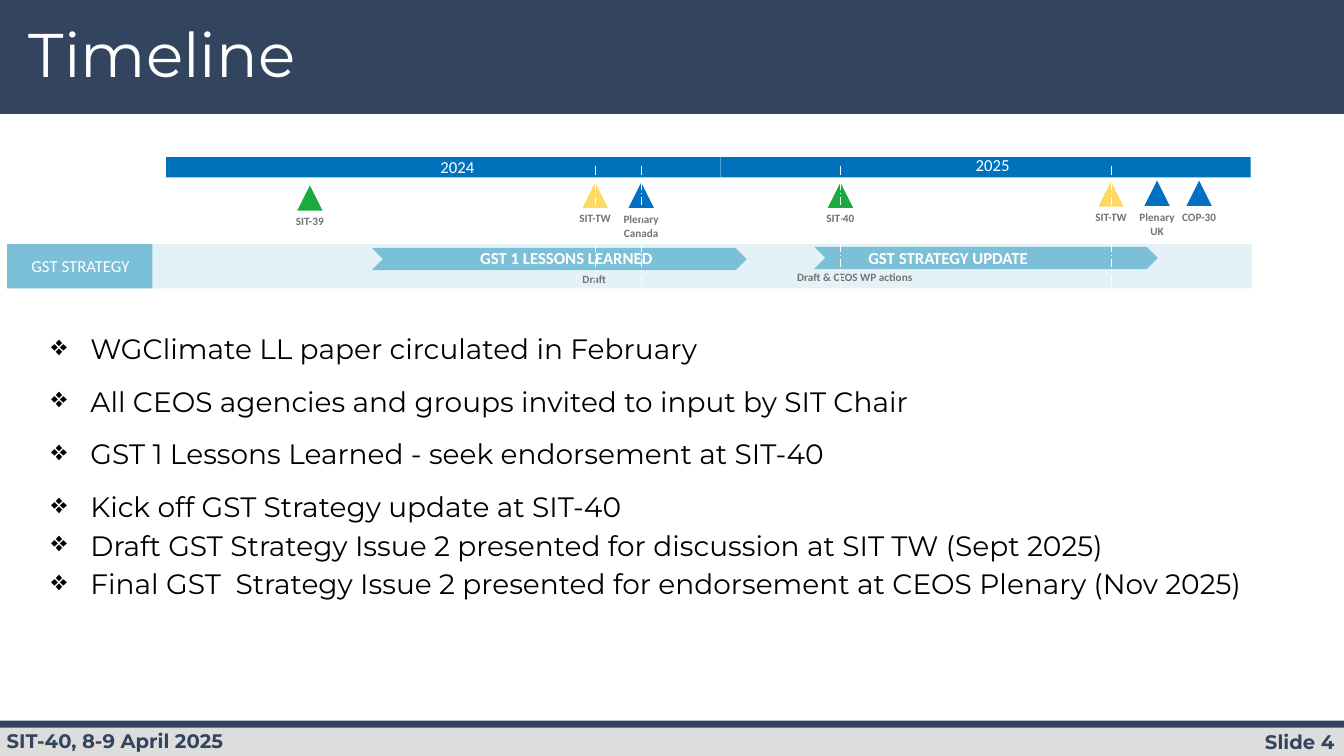
"""Build the Timeline slide: a 2024-2025 milestone chart above six bullet points."""
from lxml import etree
from pptx import Presentation
from pptx.dml.color import RGBColor
from pptx.enum import dml, shapes, text
from pptx.oxml import ns
from pptx.util import Cm, Pt

NAVY, SKY, BLUE, GREEN, YELLOW = "33445F", "7BC0D7", "0072BC", "1AAA42", "FFD966"
PLENARY, WHITE, GREY, BLACK = "0070C0", "FFFFFF", "737373", "000000"
LEFT, CENTER, RIGHT = text.PP_ALIGN.LEFT, text.PP_ALIGN.CENTER, text.PP_ALIGN.RIGHT
KIND = shapes.MSO_SHAPE

deck = Presentation()
deck.slide_width, deck.slide_height = Cm(33.87), Cm(19.05)
slide = deck.slides.add_slide(deck.slide_layouts[6])


def add_block(kind, x, y, w, h, color):
    block = slide.shapes.add_shape(kind, Cm(x), Cm(y), Cm(w), Cm(h))
    block.shadow.inherit = False
    block.fill.solid()
    block.fill.fore_color.rgb = RGBColor.from_string(color)
    block.line.fill.background()
    return block


def add_text(lines, x, y, w, h, size, color, bold=False, align=LEFT,
             font="Calibri", inset=(0, 0), anchor=text.MSO_ANCHOR.MIDDLE):
    frame = slide.shapes.add_textbox(Cm(x), Cm(y), Cm(w), Cm(h)).text_frame
    frame.word_wrap = True
    frame.vertical_anchor = anchor
    frame.margin_left = frame.margin_right = Cm(inset[0])
    frame.margin_top = frame.margin_bottom = Cm(inset[1])
    for number, line in enumerate(lines):
        paragraph = frame.add_paragraph() if number else frame.paragraphs[0]
        paragraph.text = line
        paragraph.alignment = align
        paragraph.font.name = font
        paragraph.font.size = Pt(size)
        paragraph.font.bold = bold
        paragraph.font.color.rgb = RGBColor.from_string(color)
    return frame


page_style = dict(font="Montserrat", inset=(0.25, 0.13), anchor=text.MSO_ANCHOR.TOP)
add_block(KIND.RECTANGLE, 0, 0, 33.87, 2.87, NAVY)
add_block(KIND.RECTANGLE, 0, 18.26, 33.87, 0.79, "DDDDDD")
add_block(KIND.RECTANGLE, 0, 18.16, 33.87, 0.18, NAVY)
add_text(["Slide 4"], 28.52, 18.26, 5.36, 0.86, 14, NAVY, True, RIGHT, **page_style)
add_text(["SIT-40, 8-9 April 2025"], -0.08, 18.24, 13.69, 0.86, 14, NAVY, True, **page_style)
title = add_text(["Timeline"], 0.48, 0.48, 26.09, 2.16, 44, WHITE, **page_style)
title.paragraphs[0].line_spacing = 0.9

strategy_band = add_block(KIND.RECTANGLE, 0.18, 6.15, 31.37, 1.12, SKY)
band_color = strategy_band.fill._xPr.find(".//" + ns.qn("a:srgbClr"))
etree.SubElement(band_color, ns.qn("a:alpha"), val="20000")
add_block(KIND.RECTANGLE, 0.18, 6.15, 3.66, 1.12, SKY)
add_text(["GST STRATEGY"], 0.2, 6.45, 3.66, 0.51, 12, WHITE, align=CENTER)

add_block(KIND.RECTANGLE, 4.19, 3.96, 27.33, 0.51, BLUE)
for year, x, y in [("2024", 11.1, 3.94), ("2025", 24.59, 3.91)]:
    add_text([year], x, y, 1.6, 0.51, 12, WHITE)

phases = [
    ("GST 1 LESSONS LEARNED", 9.37, 6.25, 9.45, 11.94),
    ("GST STRATEGY UPDATE", 20.52, 6.22, 8.66, 21.56),
]
for phase, x, y, width, text_x in phases:
    add_block(KIND.CHEVRON, x, y, width, 0.56, SKY)
    add_text([phase], text_x, 6.25, 4.67, 0.51, 12, WHITE, True, CENTER)
add_text(["Draft"], 14.68, 6.86, 1.55, 0.33, 8, GREY, True)
add_text(["Draft & CEOS WP actions"], 20.09, 6.81, 3.15, 0.33, 8, GREY, True)

milestones = [
    (["SIT-39"], 7.81, 4.67, 5.41, GREEN),
    (["SIT-TW"], 15, 4.6, 5.33, YELLOW),
    (["Plenary", "Canada"], 16.16, 4.6, 5.36, PLENARY),
    (["SIT-40"], 21.18, 4.6, 5.33, GREEN),
    (["SIT-TW"], 28, 4.57, 5.31, YELLOW),
    (["Plenary", "UK"], 29.16, 4.55, 5.31, PLENARY),
    (["COP-30"], 30.22, 4.55, 5.31, PLENARY),
]
for name, center, marker_y, name_y, color in milestones:
    add_block(KIND.ISOSCELES_TRIANGLE, center - 0.32, marker_y, 0.64, 0.64, color)
    add_text(name, center - 0.65, name_y, 1.3, 0.34 * len(name), 8, GREY, True, CENTER)

year_divider = 18.16
for x in [year_divider, 15, 16.16, 21.18, 28]:
    top, bottom = (3.96, 4.47) if x == year_divider else (4.19, 16.26)
    rule = slide.shapes.add_connector(
        shapes.MSO_CONNECTOR.STRAIGHT, Cm(x), Cm(top), Cm(x), Cm(bottom))
    rule.line.width = Pt(0.75)
    rule.line.color.rgb = RGBColor.from_string(WHITE)
    if x == year_divider:
        rule_color = rule.line._ln.find(".//" + ns.qn("a:srgbClr"))
        etree.SubElement(rule_color, ns.qn("a:alpha"), val="29000")
    else:
        rule.line.dash_style = dml.MSO_LINE.LONG_DASH_DOT
    etree.SubElement(rule._element.spPr, ns.qn("a:effectLst"))

steps = [
    "WGClimate LL paper circulated in February",
    "All CEOS agencies and groups invited to input by SIT Chair",
    "GST 1 Lessons Learned - seek endorsement at SIT-40",
    "Kick off GST Strategy update at SIT-40",
    "Draft GST Strategy Issue 2 presented for discussion at SIT TW (Sept 2025)",
    "Final GST  Strategy Issue 2 presented for endorsement at CEOS Plenary (Nov 2025)",
]
plan = add_text(steps, 0.76, 8.1, 31.93, 8.23, 20, BLACK, **page_style)
for number, paragraph in enumerate(plan.paragraphs):
    properties = paragraph._p.get_or_add_pPr()
    properties.set("marL", str(Cm(1.27)))
    properties.set("indent", str(Cm(-0.99)))
    bullet = etree.Element(ns.qn("a:buChar"), char="❖")
    bullet_color = etree.Element(ns.qn("a:buClr"))
    etree.SubElement(bullet_color, ns.qn("a:srgbClr"), val=BLACK)
    properties.insert(0, bullet_color)
    properties.insert(1, bullet)
    paragraph.line_spacing = 1.15
    paragraph.space_before = Pt(10 if 0 < number < 4 else 0)

deck.save("out.pptx")
